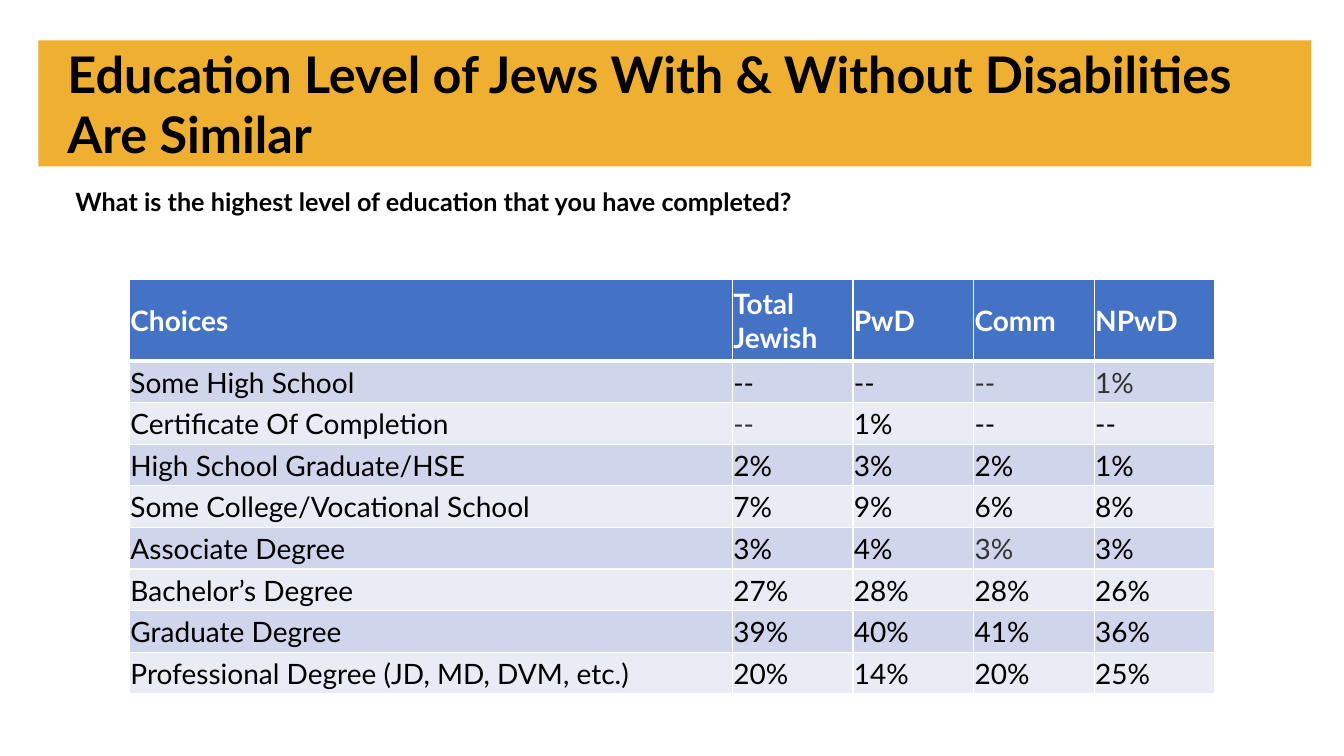
"""Build a slide with a table of education levels by respondent group."""
import pptx
import pptx.dml.color
import pptx.enum.shapes
import pptx.enum.text
import pptx.util
from lxml import etree

Pt = pptx.util.Pt
RGB = pptx.dml.color.RGBColor.from_string
ANCHOR = pptx.enum.text.MSO_ANCHOR

TITLE = "Education Level of Jews With & Without Disabilities Are Similar"
QUESTION = "What is the highest level of education that you have completed?"
ROWS = [
    ("Choices", "Total Jewish", "PwD", "Comm", "NPwD"),
    ("Some High School", "--", "--", "--", "1%"),
    ("Certificate Of Completion", "--", "1%", "--", "--"),
    ("High School Graduate/HSE", "2%", "3%", "2%", "1%"),
    ("Some College/Vocational School", "7%", "9%", "6%", "8%"),
    ("Associate Degree", "3%", "4%", "3%", "3%"),
    ("Bachelor’s Degree", "27%", "28%", "28%", "26%"),
    ("Graduate Degree", "39%", "40%", "41%", "36%"),
    ("Professional Degree (JD, MD, DVM, etc.)", "20%", "14%", "20%", "25%"),
]
GREY_CELLS = {(1, 3), (1, 4), (2, 1), (5, 3)}

THEME = {
    "font": "Lato", "title": 36, "question": 18, "cell": 20,
    "text": "000000", "grey": "333333", "white": "FFFFFF",
    "band": "EFAF30", "header": "4472C4", "stripes": ("E9EBF5", "CFD5EA"),
}
SLIDE = (960, 540)
BAND = (27.4, 28.8, 909.2, 90)
TITLE_BOX = (41, 28.8, 897, 90)
QUESTION_BOX = (46.8, 129.6, 836.6, 29)
TABLE_ORIGIN = (92.5, 199.4)
COLUMNS = [430.6] + [86.2] * 4
HEIGHTS = [58.4] + [29.75] * (len(ROWS) - 1)


def points(values):
    return [Pt(value) for value in values]


def write(frame, text, size, color=THEME["text"], bold=False, anchor=ANCHOR.MIDDLE):
    frame.word_wrap = True
    frame.vertical_anchor = anchor
    para = frame.paragraphs[0]
    para.alignment = pptx.enum.text.PP_ALIGN.LEFT
    span = para.add_run()
    span.text = text
    span.font.name = THEME["font"]
    span.font.size = Pt(size)
    span.font.bold = bold
    span.font.color.rgb = RGB(color)


def add_borders(cell, widths):
    properties = cell._tc.get_or_add_tcPr()
    for position, (side, width) in enumerate(widths.items()):
        line = pptx.oxml.parse_xml(
            f'<a:{side} xmlns:a="http://schemas.openxmlformats.org/drawingml/2006/main" w="{Pt(width)}">'
            f'<a:solidFill><a:srgbClr val="{THEME["white"]}"/></a:solidFill></a:{side}>')
        properties.insert(position, line)


def add_title(page):
    title = page.shapes.title
    title.left, title.top, title.width, title.height = points(TITLE_BOX)
    title.text_frame.auto_size = pptx.enum.text.MSO_AUTO_SIZE.NONE
    write(title.text_frame, TITLE, THEME["title"], bold=True)
    band = page.shapes.add_shape(pptx.enum.shapes.MSO_SHAPE.RECTANGLE, *points(BAND))
    band.shadow.inherit = False
    band.fill.solid()
    band.fill.fore_color.rgb = RGB(THEME["band"])
    band.line.fill.background()
    title.element.addprevious(band.element)


def add_education_table(page):
    size = (sum(COLUMNS), sum(HEIGHTS))
    table = page.shapes.add_table(
        len(ROWS), len(COLUMNS), *points(TABLE_ORIGIN + size)).table
    for column, width in zip(table.columns, COLUMNS):
        column.width = Pt(width)
    for r, (values, height) in enumerate(zip(ROWS, HEIGHTS)):
        table.rows[r].height = Pt(height)
        header = r == 0
        fill = THEME["header"] if header else THEME["stripes"][r % 2]
        for c, text in enumerate(values):
            cell = table.cell(r, c)
            cell.margin_left = cell.margin_right = cell.margin_top = Pt(0.7)
            cell.margin_bottom = 0
            cell.vertical_anchor = ANCHOR.MIDDLE
            cell.fill.solid()
            cell.fill.fore_color.rgb = RGB(fill)
            color = "white" if header else "grey" if (r, c) in GREY_CELLS else "text"
            write(cell.text_frame, text, THEME["cell"], color=THEME[color], bold=header)
            add_borders(cell, {"lnL": 1, "lnR": 1, "lnT": 3 if r == 1 else 1,
                               "lnB": 3 if header else 1})


def main():
    deck = pptx.Presentation()
    deck.slide_width, deck.slide_height = points(SLIDE)
    page = deck.slides.add_slide(deck.slide_layouts[5])
    add_title(page)
    box = page.shapes.add_textbox(*points(QUESTION_BOX))
    write(box.text_frame, QUESTION, THEME["question"], bold=True, anchor=ANCHOR.TOP)
    add_education_table(page)
    deck.save("out.pptx")


if __name__ == "__main__":
    main()
